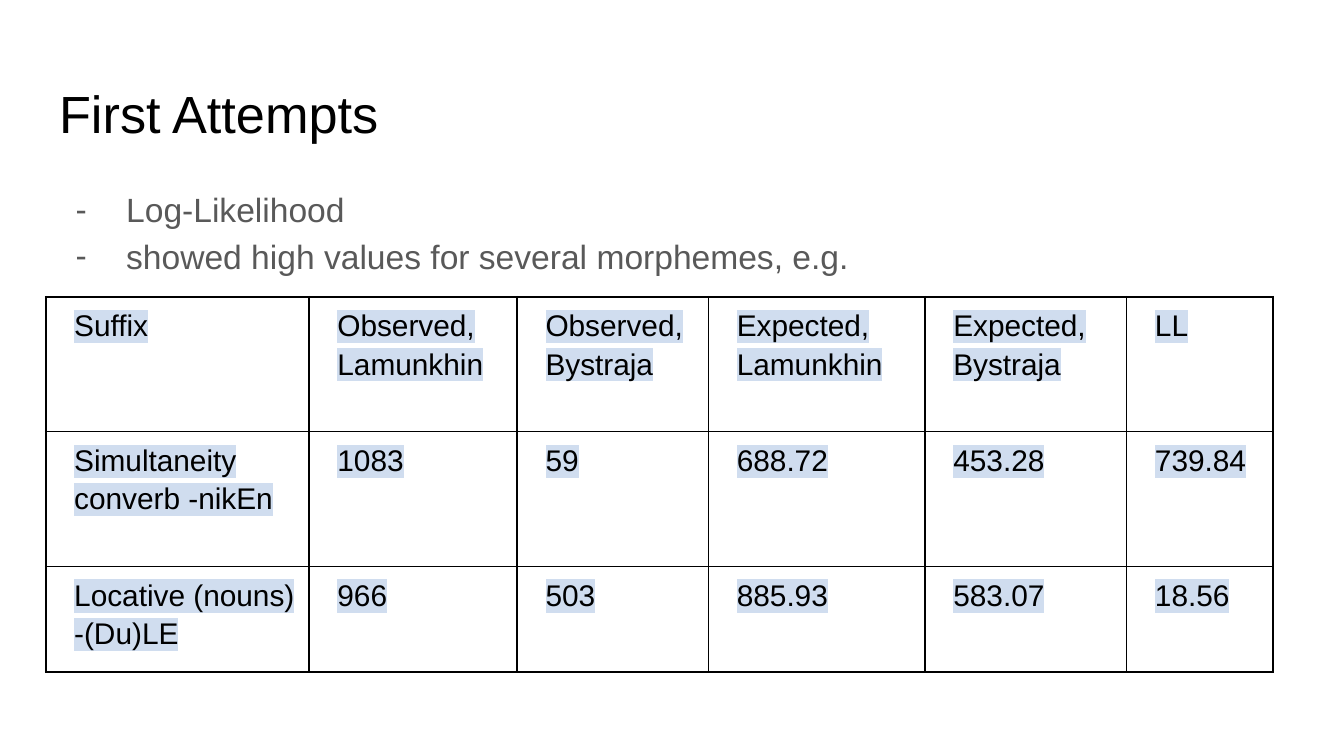
import pptx
import pptx.dml.color
import pptx.enum.text
import pptx.oxml
import pptx.oxml.ns
import pptx.util
from lxml import etree

Pt = pptx.util.Pt
BLACK, GREY, HIGHLIGHT = "000000", "595959", "D0DDEF"


def color(hex_value):
    return pptx.dml.color.RGBColor.from_string(hex_value)


def add_colored(parent, tag, hex_value):
    """Add an a:tag element that holds one sRGB colour."""
    element = etree.SubElement(parent, pptx.oxml.ns.qn("a:" + tag))
    etree.SubElement(element, pptx.oxml.ns.qn("a:srgbClr"), val=hex_value)
    return element


class SlideBuilder:
    font = "Arial"
    line_spacing = 1.15

    def __init__(self, slide):
        self.slide = slide

    def style(self, paragraph, size, hex_value):
        for run in paragraph.runs:
            run.font.name = self.font
            run.font.size = Pt(size)
            run.font.color.rgb = color(hex_value)

    def frame(self, shape, inset):
        frame = shape.text_frame
        frame.word_wrap = True
        frame.auto_size = pptx.enum.text.MSO_AUTO_SIZE.NONE
        frame.vertical_anchor = pptx.enum.text.MSO_ANCHOR.TOP
        frame.margin_left = frame.margin_right = Pt(inset)
        frame.margin_top = frame.margin_bottom = Pt(inset)
        return frame

    def title(self, text, left, top, width, height):
        heading = self.slide.shapes.title
        heading.left, heading.top = Pt(left), Pt(top)
        heading.width, heading.height = Pt(width), Pt(height)
        frame = self.frame(heading, 7.2)
        frame.text = text
        frame.paragraphs[0].alignment = pptx.enum.text.PP_ALIGN.LEFT
        self.style(frame.paragraphs[0], 28, BLACK)

    def bullets(self, lines, left, top, width, height):
        box = self.slide.shapes.add_textbox(Pt(left), Pt(top), Pt(width), Pt(height))
        frame = self.frame(box, 7.2)
        frame.text = "\n".join(lines)
        for paragraph in frame.paragraphs:
            paragraph.line_spacing = self.line_spacing
            self.style(paragraph, 18, GREY)
            properties = paragraph._p.get_or_add_pPr()
            properties.set("marL", str(Pt(36)))
            properties.set("indent", str(-Pt(27)))
            add_colored(properties, "buClr", GREY)
            etree.SubElement(properties, pptx.oxml.ns.qn("a:buFont"), typeface=self.font)
            etree.SubElement(properties, pptx.oxml.ns.qn("a:buChar"), char="-")

    def table(self, rows, left, top, widths, heights):
        grid = self.slide.shapes.add_table(
            len(rows), len(widths), Pt(left), Pt(top), Pt(sum(widths)), Pt(sum(heights))
        ).table
        grid.first_row = grid.horz_banding = False
        for column, width in zip(grid.columns, widths):
            column.width = Pt(width)
        for row, height, values in zip(grid.rows, heights, rows):
            row.height = Pt(height)
            for cell, value in zip(row.cells, values):
                self.cell(cell, value)

    def cell(self, cell, value):
        cell.margin_left = cell.margin_right = Pt(4.5)
        cell.margin_top = cell.margin_bottom = Pt(4.5)
        cell.fill.background()
        cell.text_frame.text = value
        paragraph = cell.text_frame.paragraphs[0]
        paragraph.line_spacing = self.line_spacing
        paragraph._p.get_or_add_pPr().set("marL", str(Pt(10.8)))
        self.style(paragraph, 16, BLACK)

        # Text highlight goes right after the text fill
        for run in paragraph.runs:
            properties = run._r.get_or_add_rPr()
            highlight = add_colored(properties, "highlight", HIGHLIGHT)
            properties.find(pptx.oxml.ns.qn("a:solidFill")).addnext(highlight)

        # Borders come before the cell fill
        properties = cell._tc.get_or_add_tcPr()
        for position, side in enumerate(("lnL", "lnR", "lnT", "lnB")):
            border = etree.Element(pptx.oxml.ns.qn("a:" + side), w=str(Pt(1)))
            add_colored(border, "solidFill", BLACK)
            properties.insert(position, border)


def main():
    deck = pptx.Presentation()
    deck.slide_width, deck.slide_height = Pt(720), Pt(405)
    builder = SlideBuilder(deck.slides.add_slide(deck.slide_layouts[5]))

    # Heading and introduction
    builder.title("First Attempts", 24.5, 36.5, 671, 45)
    builder.bullets(
        ["Log-Likelihood", "showed high values for several morphemes, e.g."],
        24.5, 91, 671, 269,
    )

    # Log-likelihood values by suffix
    builder.table(
        [
            ["Suffix", "Observed, Lamunkhin", "Observed, Bystraja",
             "Expected, Lamunkhin", "Expected, Bystraja", "LL"],
            ["Simultaneity converb -nikEn", "1083", "59", "688.72", "453.28", "739.84"],
            ["Locative (nouns) -(Du)LE", "966", "503", "885.93", "583.07", "18.56"],
        ],
        24.5, 159,
        widths=[141, 111.5, 102.5, 116, 108, 78.5],
        heights=[72.2, 72.2, 56.5],
    )
    deck.save("out.pptx")


if __name__ == "__main__":
    main()
